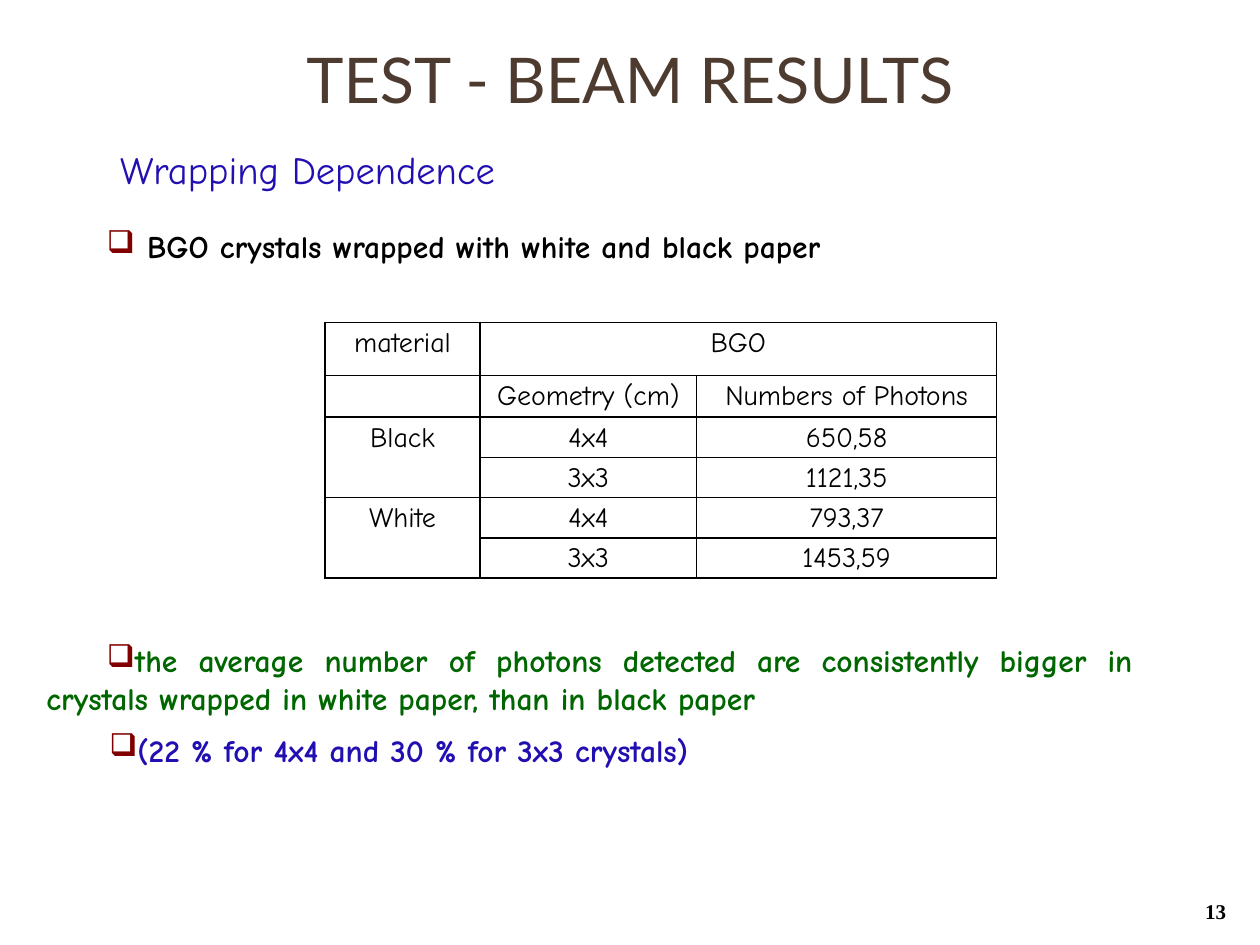
from dataclasses import dataclass

from lxml import etree
from pptx import Presentation
from pptx.dml.color import RGBColor
from pptx.enum.text import MSO_ANCHOR, MSO_AUTO_SIZE, PP_ALIGN
from pptx.oxml.ns import qn
from pptx.util import Inches, Pt

CENTER, RIGHT, JUSTIFY = PP_ALIGN.CENTER, PP_ALIGN.RIGHT, PP_ALIGN.JUSTIFY
TOP, MIDDLE = MSO_ANCHOR.TOP, MSO_ANCHOR.MIDDLE
FIT_SHAPE, NO_FIT = MSO_AUTO_SIZE.SHAPE_TO_FIT_TEXT, MSO_AUTO_SIZE.NONE
TITLE_ONLY = 5
WIDTH, HEIGHT = 10, 7.5

BODY_FONT = "Comic Neue"
BLACK, BLUE, GREEN, BROWN, MAROON = "000000", "220FB1", "006600", "4E3B30", "800000"
BULLET = "❑"

TABLE_LEFT, TABLE_TOP = 2.58, 2.56
COLUMN_WIDTHS = (1.23, 1.72, 2.38)
ROW_HEIGHTS = (0.42, 0.33, 0.32, 0.32, 0.32, 0.32)
PHOTON_ROWS = (
    ("material", "BGO", ""),
    ("", "Geometry (cm)", "Numbers of Photons"),
    ("Black", "4x4", "650,58"),
    ("", "3x3", "1121,35"),
    ("White", "4x4", "793,37"),
    ("", "3x3", "1453,59"),
)
MERGES = (((0, 1), (0, 2)), ((2, 0), (3, 0)), ((4, 0), (5, 0)))


@dataclass
class Label:
    text: str
    left: float
    top: float
    width: float
    height: float
    color: str
    size: float = 18
    font: str = BODY_FONT
    bold: bool = True
    align: PP_ALIGN = JUSTIFY
    anchor: MSO_ANCHOR = TOP
    margin: float = 0.1
    indent: float = 0.48
    bullet: bool = True


LABELS = (
    Label("13", 9, 7.08, 0.83, 0.27, BLACK, size=12, font="Times New Roman",
          align=RIGHT, margin=0, indent=0, bullet=False),
    Label("Wrapping Dependence", 0, 1.11, 4.58, 0.47, BLUE, size=22, bold=False,
          align=CENTER, anchor=MIDDLE, margin=0, indent=0.3, bullet=False),
    Label("BGO crystals wrapped with white and black paper", 0.17, 1.75, 8.5, 0.4,
          BLACK, anchor=MIDDLE, margin=0.9, indent=-0.32),
    Label("(22 % for 4x4 and 30 % for 3x3 crystals)", 0.19, 5.75, 7.23, 0.4, BLUE),
    Label("the average number of photons detected are consistently bigger in "
          "crystals wrapped in white paper, than in black paper",
          0.17, 5.04, 8.92, 0.71, GREEN),
)


def rgb(color: str) -> RGBColor:
    return RGBColor.from_string(color)


def set_font(para, name: str, size: float, color: str, bold: bool = False) -> None:
    para.font.name = name
    para.font.size = Pt(size)
    para.font.bold = bold
    para.font.color.rgb = rgb(color)


def add_solid_color(parent, tag: str, color: str) -> None:
    holder = etree.SubElement(parent, qn(tag))
    etree.SubElement(holder, qn("a:srgbClr"), val=color)


def set_indent(para, margin: float, indent: float, bullet: bool) -> None:
    properties = para._p.get_or_add_pPr()
    properties.set("marL", str(Inches(margin)))
    properties.set("indent", str(Inches(indent)))
    if bullet:
        add_solid_color(properties, "a:buClr", MAROON)
        etree.SubElement(properties, qn("a:buChar"), char=BULLET)


def add_title(page, text: str) -> None:
    title = page.shapes.title
    title.left, title.top = 0, 0
    title.width, title.height = Inches(WIDTH), Inches(HEIGHT / 6)
    frame = title.text_frame
    frame.text = text
    frame.vertical_anchor = MIDDLE
    frame.auto_size = NO_FIT
    para = frame.paragraphs[0]
    para.alignment = CENTER
    set_font(para, "Lato", 36, BROWN)


def add_label(page, label: Label) -> None:
    box = page.shapes.add_textbox(Inches(label.left), Inches(label.top),
                                  Inches(label.width), Inches(label.height))
    frame = box.text_frame
    frame.word_wrap = True
    frame.auto_size = FIT_SHAPE
    frame.vertical_anchor = label.anchor
    para = frame.paragraphs[0]
    para.text = label.text
    para.alignment = label.align
    set_indent(para, label.margin, label.indent, label.bullet)
    set_font(para, label.font, label.size, label.color, label.bold)


def format_cell(cell, text: str) -> None:
    cell.margin_left = cell.margin_right = Inches(0.07)
    cell.margin_top = cell.margin_bottom = 0
    para = cell.text_frame.paragraphs[0]
    para.text = text
    para.alignment = CENTER
    para.line_spacing = 1.15
    set_font(para, BODY_FONT, 16, BLACK)
    properties = cell._tc.get_or_add_tcPr()
    for side in "LRTB":
        line = etree.SubElement(properties, qn(f"a:ln{side}"), w=str(Pt(1)))
        add_solid_color(line, "a:solidFill", BLACK)
    cell.fill.background()


def add_photon_table(page) -> None:
    frame = page.shapes.add_table(
        len(ROW_HEIGHTS), len(COLUMN_WIDTHS), Inches(TABLE_LEFT), Inches(TABLE_TOP),
        Inches(sum(COLUMN_WIDTHS)), Inches(sum(ROW_HEIGHTS)))
    table = frame.table
    table.first_row = table.horz_banding = False
    for column, width in zip(table.columns, COLUMN_WIDTHS):
        column.width = Inches(width)
    for row, height, texts in zip(table.rows, ROW_HEIGHTS, PHOTON_ROWS):
        row.height = Inches(height)
        for cell, text in zip(row.cells, texts):
            format_cell(cell, text)
    for first, last in MERGES:
        table.cell(*first).merge(table.cell(*last))


def main() -> None:
    deck = Presentation()
    deck.slide_width, deck.slide_height = Inches(WIDTH), Inches(HEIGHT)
    page = deck.slides.add_slide(deck.slide_layouts[TITLE_ONLY])
    add_title(page, "TEST - BEAM RESULTS")
    add_photon_table(page)
    for label in LABELS:
        add_label(page, label)
    deck.save("out.pptx")


if __name__ == "__main__":
    main()
